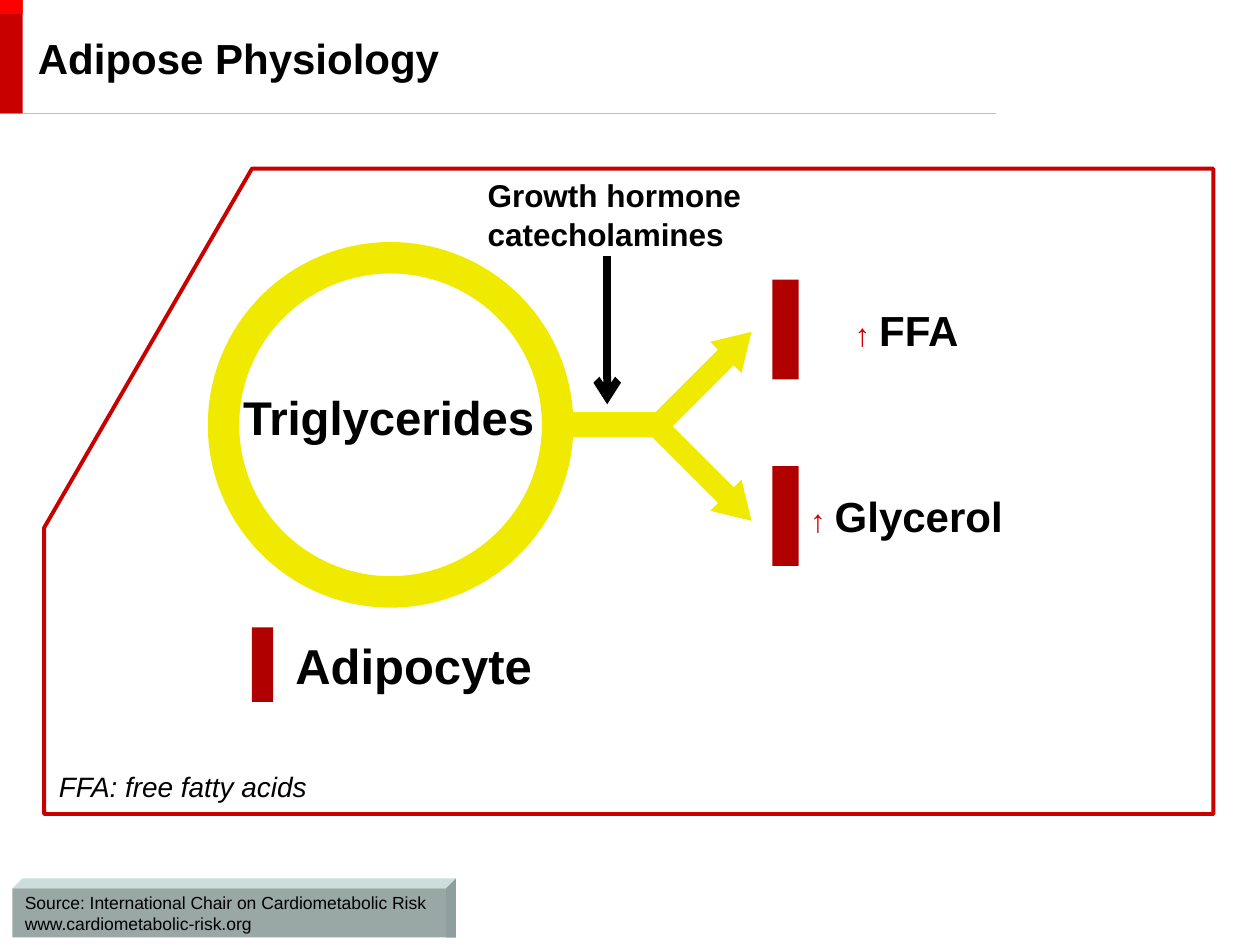
from dataclasses import dataclass

import pptx
import pptx.dml.color
import pptx.enum.shapes
import pptx.enum.text
import pptx.oxml.ns
import pptx.util
from lxml import etree

Cm = pptx.util.Cm
RGBColor = pptx.dml.color.RGBColor
SHAPE = pptx.enum.shapes.MSO_SHAPE
ALIGN = pptx.enum.text.PP_ALIGN
ANCHOR = pptx.enum.text.MSO_ANCHOR

BLACK = RGBColor(0x00, 0x00, 0x00)
WHITE = RGBColor(0xFF, 0xFF, 0xFF)
GREY = RGBColor(0xC0, 0xC0, 0xC0)
RED = RGBColor(0xC8, 0x00, 0x00)
BRIGHT_RED = RGBColor(0xFE, 0x00, 0x00)
DARK_RED = RGBColor(0xB0, 0x00, 0x00)
YELLOW = RGBColor(0xF0, 0xEA, 0x00)
PLATE_FRONT = RGBColor(0x99, 0xA7, 0xA5)
PLATE_TOP = RGBColor(0xCB, 0xDE, 0xDC)
PLATE_SIDE = RGBColor(0x8F, 0x9F, 0x9D)


@dataclass
class Box:
    left: float
    top: float
    width: float
    height: float

    def lengths(self) -> tuple:
        return Cm(self.left), Cm(self.top), Cm(self.width), Cm(self.height)


@dataclass
class Label:
    box: Box
    lines: tuple
    size: float
    bold: bool = True
    italic: bool = False
    wrap: bool = False
    spacing: float = 1.0


@dataclass
class Tag:
    text: str
    size: float
    box: Box
    bar_left: float
    bar_width: float
    rising: bool = False


LABELS = (
    Label(Box(4.65, 7.7, 6.43, 1.4), ("Triglycerides",), 27),
    Label(Box(9.58, 3.38, 5.74, 1.78), ("Growth hormone", "catecholamines"), 18,
          wrap=True, spacing=1.05),
    Label(Box(0.94, 15.39, 6.17, 0.99), ("FFA: free fatty acids",), 16,
          bold=False, italic=True),
)
TAGS = (
    Tag("Adipocyte", 28, Box(5.51, 12.65, 5.66, 1.5), 5.08, 0.43),
    Tag("FFA", 24, Box(15.85, 5.64, 4.85, 2.01), 15.57, 0.53, True),
    Tag("Glycerol", 24, Box(15.85, 9.4, 4.85, 2.01), 15.57, 0.53, True),
)


def set_font(p, size: float, bold: bool = True, italic: bool = False) -> None:
    p.font.name = "Arial"
    p.font.size = pptx.util.Pt(size)
    p.font.bold = bold
    p.font.italic = italic
    p.font.color.rgb = BLACK


def add_block(s, kind, box: Box, fill: RGBColor, adjustments: tuple = (), rotation: float = 0):
    sp = s.shapes.add_shape(kind, *box.lengths())
    sp.shadow.inherit = False
    sp.fill.solid()
    sp.fill.fore_color.rgb = fill
    sp.line.fill.background()
    sp.rotation = rotation
    for i, value in enumerate(adjustments):
        sp.adjustments[i] = value
    return sp


def add_polygon(s, points: tuple, fill: RGBColor):
    corners = [(Cm(x), Cm(y)) for x, y in points]
    builder = s.shapes.build_freeform(*corners[0], scale=1.0)
    builder.add_line_segments(corners[1:], close=True)
    sp = builder.convert_to_shape()
    sp.shadow.inherit = False
    sp.fill.solid()
    sp.fill.fore_color.rgb = fill
    sp.line.fill.background()
    return sp


def add_line(s, x1: float, y1: float, x2: float, y2: float, color: RGBColor, width: float):
    line = s.shapes.add_connector(pptx.enum.shapes.MSO_CONNECTOR.STRAIGHT,
                                  Cm(x1), Cm(y1), Cm(x2), Cm(y2))
    line.line.color.rgb = color
    line.line.width = pptx.util.Pt(width)
    etree.SubElement(line._element.spPr, pptx.oxml.ns.qn("a:effectLst"))
    return line


def add_label(s, label: Label) -> None:
    tf = s.shapes.add_textbox(*label.box.lengths()).text_frame
    tf.word_wrap = label.wrap
    tf.text = "\n".join(label.lines)
    for p in tf.paragraphs:
        p.line_spacing = label.spacing
        set_font(p, label.size, label.bold, label.italic)


def add_tag(s, tag: Tag) -> None:
    tf = add_block(s, SHAPE.RECTANGLE, tag.box, WHITE).text_frame
    tf.word_wrap = False
    tf.vertical_anchor = ANCHOR.MIDDLE
    p = tf.paragraphs[0]
    p.alignment = ALIGN.CENTER
    set_font(p, tag.size)
    if tag.rising:
        r = p.add_run()
        r.text = "↑ "
        r.font.size = pptx.util.Pt(18)
        r.font.color.rgb = RED
    p.add_run().text = tag.text
    bar = Box(tag.bar_left, tag.box.top, tag.bar_width, tag.box.height)
    add_block(s, SHAPE.RECTANGLE, bar, DARK_RED)


def add_source_plate(s) -> None:
    left, top, right, bottom, depth = 0.25, 17.91, 8.99, 18.9, 0.2
    add_polygon(s, ((left, top), (left + depth, top - depth),
                    (right + depth, top - depth), (right, top)), PLATE_TOP)
    add_polygon(s, ((right, top), (right + depth, top - depth),
                    (right + depth, bottom), (right, bottom)), PLATE_SIDE)
    sp = add_block(s, SHAPE.RECTANGLE, Box(left, top, right - left, bottom - top), PLATE_FRONT)
    tf = sp.text_frame
    tf.word_wrap = True
    tf.vertical_anchor = ANCHOR.MIDDLE
    p = tf.paragraphs[0]
    p.text = "Source: International Chair on Cardiometabolic Risk www.cardiometabolic-risk.org"
    p.alignment = ALIGN.LEFT
    set_font(p, 10, bold=False)


def add_title(s, text: str) -> None:
    title = s.shapes.title
    title.left, title.top, title.width, title.height = Box(0.51, 0, 23.01, 2.31).lengths()
    tf = title.text_frame
    tf.text = text
    tf.vertical_anchor = ANCHOR.MIDDLE
    p = tf.paragraphs[0]
    p.alignment = ALIGN.LEFT
    set_font(p, 24)


def add_pathway(s) -> None:
    add_block(s, SHAPE.DONUT, Box(4.19, 4.88, 7.37, 7.37), YELLOW, (0.086,))
    add_block(s, SHAPE.RECTANGLE, Box(11.46, 8.31, 1.98, 0.51), YELLOW)
    for top, rotation in ((7.26, 315), (9.04, 45)):
        add_block(s, SHAPE.RIGHT_ARROW, Box(12.7, top, 2.87, 0.89), YELLOW,
                  (0.5, 0.819), rotation)
    hormone = add_line(s, 12.24, 5.16, 12.24, 8.15, BLACK, 4.5)
    etree.SubElement(hormone.line._get_or_add_ln(), pptx.oxml.ns.qn("a:tailEnd"), type="arrow")


def main() -> None:
    prs = pptx.Presentation()
    prs.slide_width, prs.slide_height = Cm(25.4), Cm(19.05)
    s = prs.slides.add_slide(prs.slide_layouts[5])
    add_line(s, 0, 2.29, 20.07, 2.29, GREY, 0.75)
    add_source_plate(s)
    for height, color in ((2.29, RED), (0.28, BRIGHT_RED)):
        add_block(s, SHAPE.RECTANGLE, Box(0, 0, 0.46, height), color)
    frame = add_polygon(s, ((5.08, 3.4), (0.89, 10.64), (0.89, 16.41),
                            (24.46, 16.41), (24.46, 3.4)), WHITE)
    frame.line.color.rgb = RED
    frame.line.width = pptx.util.Pt(2.25)
    add_title(s, "Adipose Physiology")
    for tag in TAGS:
        add_tag(s, tag)
    add_pathway(s)
    for label in LABELS:
        add_label(s, label)
    prs.save("out.pptx")


if __name__ == "__main__":
    main()
